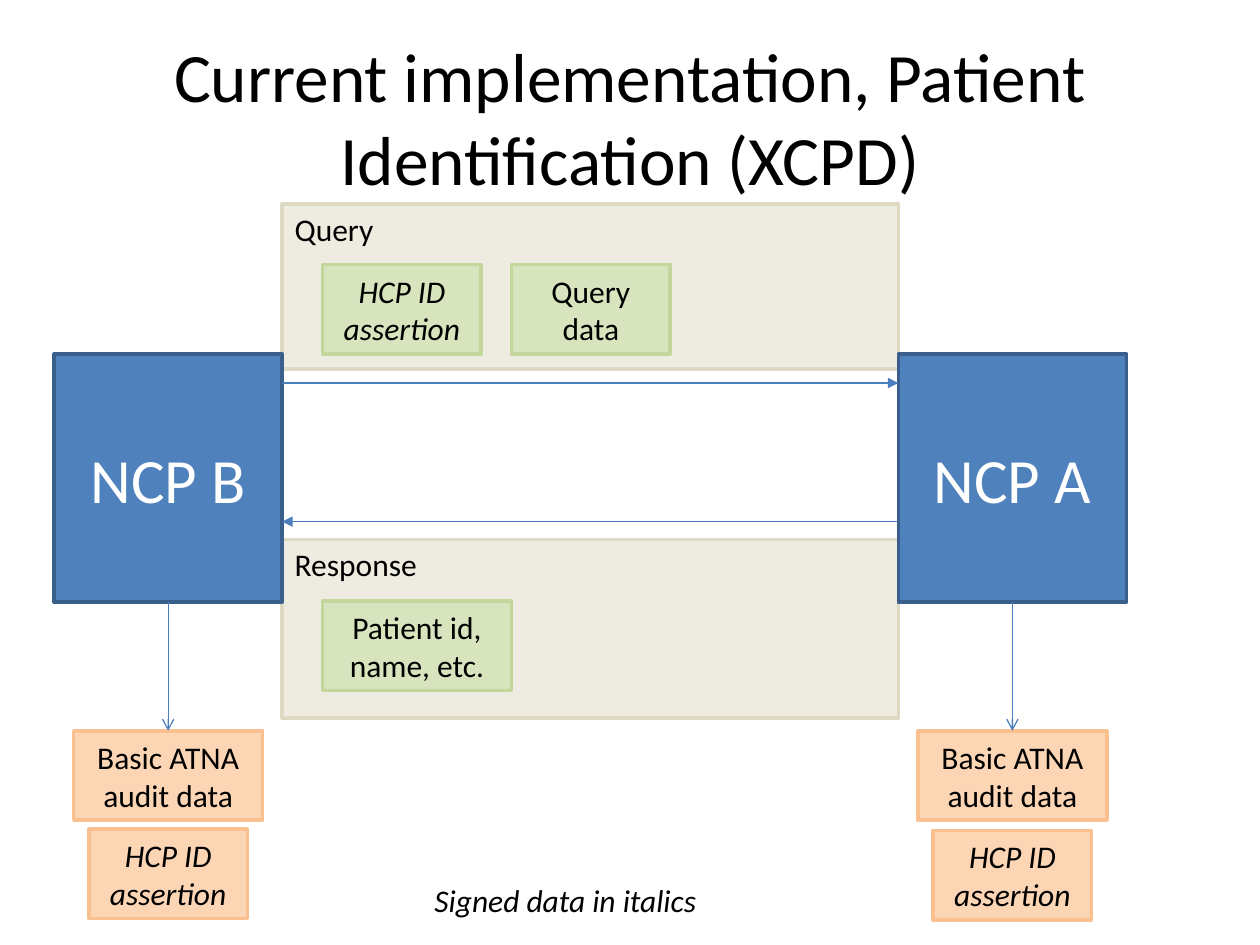
import pptx
import pptx.util
import pptx.dml.color
import pptx.enum.shapes
import pptx.enum.text
import pptx.oxml.ns
import lxml.etree

Inches = pptx.util.Inches
Pt = pptx.util.Pt
RGBColor = pptx.dml.color.RGBColor
PP_ALIGN = pptx.enum.text.PP_ALIGN
MSO_ANCHOR = pptx.enum.text.MSO_ANCHOR
qn = pptx.oxml.ns.qn

BLACK = RGBColor(0x00, 0x00, 0x00)
WHITE = RGBColor(0xFF, 0xFF, 0xFF)
ARROW = RGBColor(0x4B, 0x7E, 0xBC)
NODE = (RGBColor(0x4F, 0x81, 0xBD), RGBColor(0x3A, 0x5F, 0x8C))
MESSAGE = (RGBColor(0xEE, 0xEC, 0xE1), RGBColor(0xDD, 0xD9, 0xC3))
CONTENT = (RGBColor(0xD7, 0xE4, 0xBD), RGBColor(0xC3, 0xD6, 0x9B))
AUDIT = (RGBColor(0xFC, 0xD5, 0xB5), RGBColor(0xFA, 0xC0, 0x90))

BOTTOM, TOP = 2, 0
NODE_WIDTH = 1.81
NODE_TOP, NODE_HEIGHT = 2.81, 1.97
LEFT_NODE, RIGHT_NODE = 0.43, 7.13
CHANNEL = LEFT_NODE + NODE_WIDTH
ITEM_HEIGHT = 0.71
NARROW, WIDE = 1.26, 1.5


class Diagram:
    font = "Calibri"

    def __init__(self, page):
        self.page = page

    def set_text(self, box, text, size=18, color=BLACK, italic=False,
                 align=PP_ALIGN.CENTER, anchor=MSO_ANCHOR.MIDDLE, wrap=True):
        frame = box.text_frame
        frame.word_wrap = wrap
        frame.vertical_anchor = anchor
        frame.text = text
        para = frame.paragraphs[0]
        para.alignment = align
        for span in para.runs:
            span.font.name = self.font
            span.font.size = Pt(size)
            span.font.italic = italic
            span.font.color.rgb = color

    def box(self, left, top, width, height, colors, text, **style):
        box = self.page.shapes.add_shape(
            pptx.enum.shapes.MSO_SHAPE.RECTANGLE,
            Inches(left), Inches(top), Inches(width), Inches(height))
        box.shadow.inherit = False
        fill, line = colors
        box.fill.solid()
        box.fill.fore_color.rgb = fill
        box.line.color.rgb = line
        box.line.width = Pt(2)
        self.set_text(box, text, **style)
        return box

    def item(self, left, top, width, colors, text, italic=False):
        return self.box(left, top, width, ITEM_HEIGHT, colors, text, italic=italic)

    def message(self, top, height, text):
        return self.box(CHANNEL, top, RIGHT_NODE - CHANNEL, height, MESSAGE, text,
                        align=PP_ALIGN.LEFT, anchor=MSO_ANCHOR.TOP)

    def label(self, left, top, width, height, text, **style):
        box = self.page.shapes.add_textbox(
            Inches(left), Inches(top), Inches(width), Inches(height))
        self.set_text(box, text, **style)
        return box

    def arrow(self, start, end, tip):
        arrow = self.page.shapes.add_connector(
            pptx.enum.shapes.MSO_CONNECTOR.STRAIGHT,
            *(Inches(value) for value in (*start, *end)))
        arrow.line.color.rgb = ARROW
        arrow.line.width = Pt(0.75)
        properties = arrow.element.spPr
        lxml.etree.SubElement(properties.find(qn("a:ln")), qn("a:tailEnd"), type=tip)
        lxml.etree.SubElement(properties, qn("a:effectLst"))
        return arrow

    def node(self, left, text):
        return self.box(left, NODE_TOP, NODE_WIDTH, NODE_HEIGHT, NODE, text,
                        size=36, color=WHITE)

    def audit(self, node, left, assertion_top):
        center = left + NODE_WIDTH / 2
        data = self.item(center - WIDE / 2, 5.8, WIDE, AUDIT, "Basic ATNA audit data")
        self.item(center - NARROW / 2, assertion_top, NARROW, AUDIT,
                  "HCP ID assertion", italic=True)
        arrow = self.arrow((center, NODE_TOP + NODE_HEIGHT), (center, 5.8), "arrow")
        arrow.begin_connect(node, BOTTOM)
        arrow.end_connect(data, TOP)


def main():
    deck = pptx.Presentation()
    deck.slide_width = Inches(10)
    deck.slide_height = Inches(7.5)
    diagram = Diagram(deck.slides.add_slide(deck.slide_layouts[6]))

    diagram.message(4.28, 1.42, "Response")
    diagram.message(1.62, 1.31, "Query")
    diagram.label(0.5, 0.3, 9, 1.25,
                  "Current implementation, Patient Identification (XCPD)", size=39.6)

    node_b = diagram.node(LEFT_NODE, "NCP B")
    node_a = diagram.node(RIGHT_NODE, "NCP A")
    diagram.arrow((CHANNEL, 3.04), (RIGHT_NODE, 3.04), "triangle")
    diagram.arrow((RIGHT_NODE, 4.14), (CHANNEL, 4.14), "triangle")

    diagram.item(2.56, 2.1, NARROW, CONTENT, "HCP ID assertion", italic=True)
    diagram.item(4.06, 2.1, NARROW, CONTENT, "Query data")
    diagram.item(2.56, 4.77, WIDE, CONTENT, "Patient id, name, etc.")

    diagram.audit(node_b, LEFT_NODE, 6.58)
    diagram.audit(node_a, RIGHT_NODE, 6.59)
    diagram.label(3.35, 6.94, 2.3, 0.4, "Signed data in italics", italic=True,
                  align=PP_ALIGN.LEFT, anchor=MSO_ANCHOR.TOP, wrap=False)

    deck.save("out.pptx")


if __name__ == "__main__":
    main()
